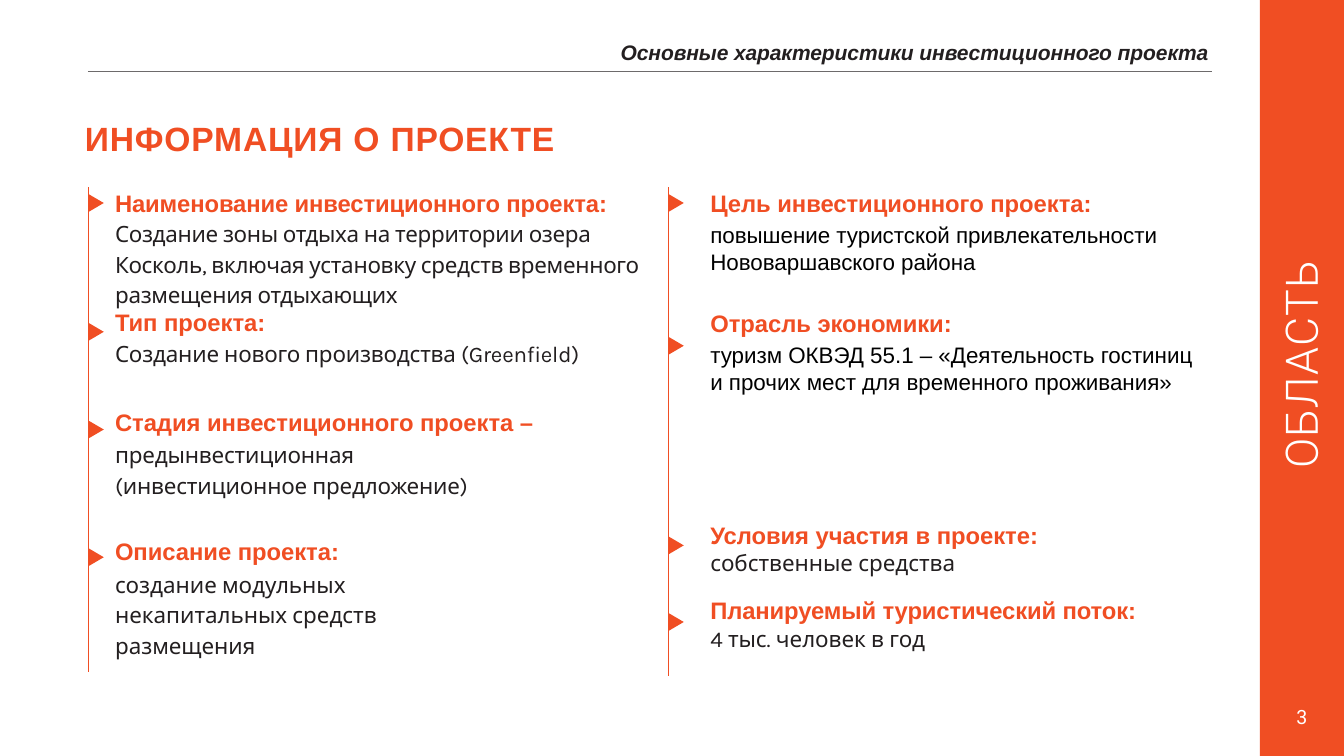
from pptx import Presentation
from pptx.dml.color import RGBColor
from pptx.enum.shapes import MSO_CONNECTOR, MSO_SHAPE
from pptx.enum.text import MSO_ANCHOR, MSO_AUTO_SIZE, PP_ALIGN
from pptx.oxml.ns import qn
from pptx.util import Pt
from lxml import etree

COLORS = {"orange": "F04E23", "ink": "231F20", "black": "000000",
          "white": "FFFFFF", "rule": "6D6A6B"}

deck = Presentation()
deck.slide_width, deck.slide_height = Pt(960), Pt(540)
slide = deck.slides.add_slide(deck.slide_layouts[5])
shapes = slide.shapes


def write(paragraph, text, font, size, color, bold=False, italic=False, spacing=0):
    """Add one run; spacing is the letter spacing in points."""
    run = paragraph.add_run()
    run.text = text
    run.font.name, run.font.size = font, Pt(size)
    run.font.bold, run.font.italic = bold, italic
    run.font.color.rgb = RGBColor.from_string(COLORS[color])
    if spacing:
        run._r.get_or_add_rPr().set("spc", str(round(spacing * 100)))


def place(holder, left, top, width, height, inset_top=0):
    """Position a text shape, clear its margins and return its first paragraph."""
    holder.left, holder.top = Pt(left), Pt(top)
    holder.width, holder.height = Pt(width), Pt(height)
    frame = holder.text_frame
    frame.word_wrap = True
    frame.auto_size = MSO_AUTO_SIZE.NONE
    frame.vertical_anchor = MSO_ANCHOR.TOP
    frame.margin_left = frame.margin_right = frame.margin_bottom = 0
    frame.margin_top = Pt(inset_top)
    return frame.paragraphs[0]


# Side band with the region label and page number
band = shapes.add_shape(MSO_SHAPE.RECTANGLE, Pt(900), 0, Pt(60), Pt(540))
band.shadow.inherit = False
band.fill.solid()
band.fill.fore_color.rgb = RGBColor.from_string(COLORS["orange"])
band.line.fill.background()

region = shapes.add_textbox(0, 0, 0, 0)
region_line = place(region, 828.5, 239.5, 200, 42)
region.rotation = 270
region.text_frame.vertical_anchor = MSO_ANCHOR.MIDDLE
region_line.alignment = PP_ALIGN.CENTER
write(region_line, "ОБЛАСТЬ", "Roboto Light", 32, "white", spacing=0.8)

page_line = place(shapes.add_textbox(0, 0, 0, 0), 926, 502, 15, 22, 1.7)
write(page_line, "3", "Roboto", 14, "white")

# Title and running header
title_line = place(shapes.title, 60.7, 54.7, 822, 60, 29.5)
title_line.alignment = PP_ALIGN.LEFT
write(title_line, "ИНФОРМАЦИЯ О ПРОЕКТЕ", "Arial", 24, "orange", bold=True, spacing=0.6)

header_line = place(shapes.add_textbox(0, 0, 0, 0), 443.3, 27.4, 425, 20, 1)
write(header_line, "Основные характеристики инвестиционного проекта",
      "Arial", 15, "ink", bold=True, italic=True, spacing=-0.05)

# Rules: x1, y1, x2, y2, width, colour
rules = [(62.8, 51, 865.7, 51, 0.5, "rule"),
         (63.2, 133.8, 63.2, 480, 1, "orange"),
         (477.5, 133.8, 477.5, 483, 1, "orange")]
for x1, y1, x2, y2, weight, color in rules:
    rule = shapes.add_connector(MSO_CONNECTOR.STRAIGHT, Pt(x1), Pt(y1), Pt(x2), Pt(y2))
    rule.line.width = Pt(weight)
    rule.line.color.rgb = RGBColor.from_string(COLORS[color])
    etree.SubElement(rule._element.spPr, qn("a:effectLst"))

# Arrow markers: one outline per vertical rule
for x, centers in [(63.2, (145, 237, 306.8, 398)), (477.5, (145, 247, 389.6, 444.3))]:
    outline = shapes.build_freeform(Pt(x), Pt(centers[0] - 6.4))
    for y in centers:
        if y != centers[0]:
            outline.move_to(Pt(x), Pt(y - 6.4))
        outline.add_line_segments([(Pt(x + 10.9), Pt(y)), (Pt(x), Pt(y + 6.4))], close=True)
    markers = outline.convert_to_shape()
    markers.shadow.inherit = False
    markers.fill.solid()
    markers.fill.fore_color.rgb = RGBColor.from_string(COLORS["orange"])
    markers.line.fill.background()

# Columns: each paragraph is (space before, line spacing, right indent, runs)
STYLES = {"heading": ("Arial", 17, "orange", True, False, -0.07),
          "name": ("Arial", 17, "orange", True, False, -0.12),
          "body": ("Karla", 16, "ink", False, False, -0.1),
          "tight": ("Karla", 16, "ink", False, False, -0.2),
          "loose": ("Karla", 16, "ink"),
          "plain": ("Arial", 16, "black")}

project = [
    (0, 1.13, 0, [("name", "Наименование инвестиционного проекта: "),
                  ("tight", "Создание зоны отдыха на территории озера Косколь, включая "
                            "установку средств временного размещения отдыхающих")]),
    (0, None, 0, [("heading", "Тип проекта:")]),
    (2.6, None, 0, [("body", "Создание нового производства (Greenfield)")]),
    (29, None, 0, [("heading", "Стадия инвестиционного проекта –")]),
    (0.6, Pt(22), 110, [("body", "предынвестиционная (инвестиционное предложение)")]),
    (27.4, None, 0, [("heading", "Описание проекта:")]),
    (0.8, Pt(22), 0, [("loose", "создание модульных некапитальных средств размещения")]),
]
purpose = [
    (0, None, 0, [("heading", "Цель инвестиционного проекта:")]),
    (2.8, None, 0, [("plain", "повышение туристской привлекательности "
                              "Нововаршавского района")]),
    (24.2, None, 0, [("heading", "Отрасль экономики:")]),
    (2.6, None, 0, [("plain", "туризм ОКВЭД 55.1 – «Деятельность гостиниц и прочих мест "
                              "для временного проживания»")]),
    (90.2, None, 0, [("heading", "Условия участия в проекте:")]),
    (0, Pt(19), 0, [("loose", "собственные средства")]),
    (13.8, None, 0, [("name", "Планируемый туристический поток:")]),
    (0.6, None, 0, [("loose", "4 тыс. человек в год")]),
]
for left, width, inset, entries in [(82.2, 396, 1, project), (507.4, 349, 3.8, purpose)]:
    column = shapes.add_textbox(0, 0, 0, 0)
    paragraph = place(column, left, 131, width, 340, inset)
    for index, (before, spacing, right_indent, pieces) in enumerate(entries):
        if index:
            paragraph = column.text_frame.add_paragraph()
            paragraph.space_before = Pt(before)
        if spacing:
            paragraph.line_spacing = spacing
        if right_indent:
            paragraph._p.get_or_add_pPr().set("marR", str(Pt(right_indent)))
        for style, text in pieces:
            write(paragraph, text, *STYLES[style])

deck.save("out.pptx")
